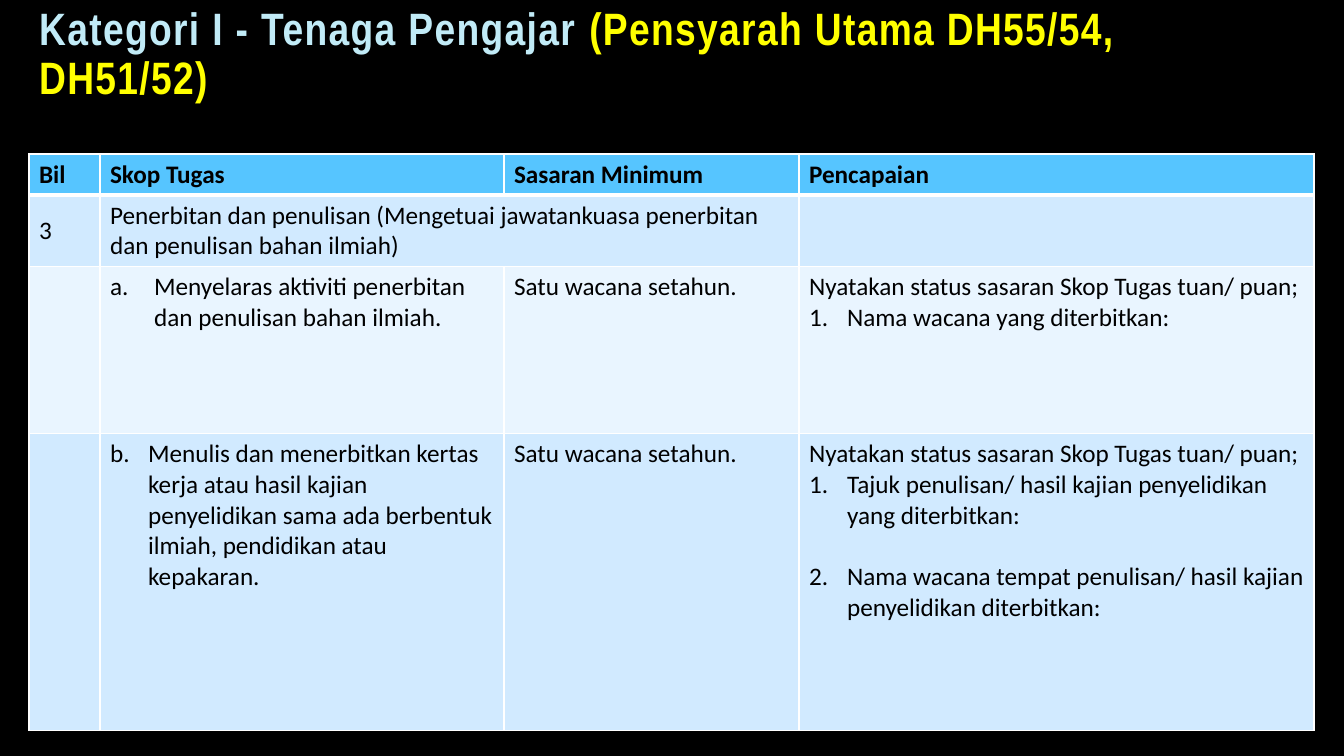
from lxml import etree
from pptx import Presentation
from pptx import util as u
from pptx.dml.color import RGBColor
from pptx.enum import text
from pptx.oxml import ns

PX = 914400 / 100.8  # EMU in one px

BLACK, WHITE = "000000", "FFFFFF"
HEADER_FILL, DARK_BAND, LIGHT_BAND = "56C5FF", "D1EAFF", "E9F5FF"

COLUMN_WIDTHS = [71, 404, 295, 515]
ROW_HEIGHTS = [41, 71, 167, 297]
ROW_FILLS = [HEADER_FILL, DARK_BAND, LIGHT_BAND, DARK_BAND]
STATUS = "Nyatakan status sasaran Skop Tugas tuan/ puan;"
TARGET = "Satu wacana setahun."

# A paragraph is plain text, or (text, numbering, start, indent px, space before pt)
ROWS = [
    [["Bil"], ["Skop Tugas"], ["Sasaran Minimum"], ["Pencapaian"]],
    [["3"],
     ["Penerbitan dan penulisan (Mengetuai jawatankuasa penerbitan dan penulisan bahan ilmiah)"],
     [], []],
    [[],
     [("Menyelaras aktiviti penerbitan dan penulisan bahan ilmiah.", "alphaLcPeriod", 1, 44, 0)],
     [TARGET],
     [STATUS, ("Nama wacana yang diterbitkan:", "arabicPeriod", 1, 38, 0)]],
    [[],
     [("Menulis dan menerbitkan kertas kerja atau hasil kajian penyelidikan sama ada "
       "berbentuk ilmiah, pendidikan atau kepakaran.", "alphaLcPeriod", 2, 38, 0)],
     [TARGET],
     [STATUS,
      ("Tajuk penulisan/ hasil kajian penyelidikan yang diterbitkan:", "arabicPeriod", 1, 38, 0),
      ("Nama wacana tempat penulisan/ hasil kajian penyelidikan diterbitkan:",
       "arabicPeriod", 2, 38, 22)]],
]


def px(length):
    return u.Emu(round(length * PX))


def color(value):
    return RGBColor.from_string(value)


def add_child(parent, tag, **attributes):
    child = etree.SubElement(parent, ns.qn(tag))
    for name, value in attributes.items():
        child.set(name, str(value))
    return child


def format_font(font, name, size, value, bold):
    font.name, font.size, font.bold = name, u.Pt(size), bold
    font.color.rgb = color(value)


def set_numbering(paragraph, numbering, start, indent):
    properties = paragraph._p.get_or_add_pPr()
    properties.set("marL", str(px(indent)))
    properties.set("indent", str(-px(indent)))
    add_child(properties, "a:buFont", typeface="+mj-lt")
    add_child(properties, "a:buAutoNum", type=numbering, startAt=start)


def set_borders(cell, top, bottom):
    properties = cell._tc.get_or_add_tcPr()
    for side, width in (("L", 1), ("R", 1), ("T", top), ("B", bottom)):
        line = add_child(properties, f"a:ln{side}", w=u.Pt(width))
        add_child(add_child(line, "a:solidFill"), "a:srgbClr", val=WHITE)


def fill_cell(cell, paragraphs, bold):
    frame = cell.text_frame
    for index, item in enumerate(paragraphs):
        paragraph = frame.add_paragraph() if index else frame.paragraphs[0]
        if isinstance(item, tuple):
            content, numbering, start, indent, space = item
            if space:
                paragraph.space_before = u.Pt(space)
            set_numbering(paragraph, numbering, start, indent)
        else:
            content = item
        paragraph.text = content
        format_font(paragraph.runs[0].font, "Calibri", 18, BLACK, bold)


def add_title(slide, parts):
    title = slide.shapes.title
    title.left, title.top, title.width, title.height = px(29), px(42), px(1146), px(67)
    frame = title.text_frame
    frame.word_wrap = True
    frame.auto_size = text.MSO_AUTO_SIZE.NONE
    frame.vertical_anchor = text.MSO_ANCHOR.BOTTOM
    paragraph = frame.paragraphs[0]
    paragraph.alignment = text.PP_ALIGN.LEFT
    paragraph.line_spacing = 0.9
    for content, value in parts:
        run = paragraph.add_run()
        run.text = content
        format_font(run.font, "Arial Narrow", 32.4, value, True)
        # Letter spacing and a faint outline
        properties = run._r.get_or_add_rPr()
        properties.set("spc", "100")
        outline = etree.Element(ns.qn("a:ln"), w=str(u.Pt(0.75)))
        tint = add_child(add_child(outline, "a:solidFill"), "a:srgbClr", val="404040")
        add_child(tint, "a:alpha", val=10000)
        properties.insert(0, outline)


def add_task_table(slide):
    table = slide.shapes.add_table(len(ROWS), len(COLUMN_WIDTHS), px(29), px(154),
                                   px(sum(COLUMN_WIDTHS)), px(sum(ROW_HEIGHTS))).table
    for column, width in zip(table.columns, COLUMN_WIDTHS):
        column.width = px(width)
    for row, height in zip(table.rows, ROW_HEIGHTS):
        row.height = px(height)
    for r, row in enumerate(ROWS):
        for c, paragraphs in enumerate(row):
            cell = table.cell(r, c)
            # The line under the header is thicker
            set_borders(cell, 3 if r == 1 else 1, 3 if r == 0 else 1)
            cell.fill.solid()
            cell.fill.fore_color.rgb = color(ROW_FILLS[r])
            cell.vertical_anchor = text.MSO_ANCHOR.MIDDLE if r < 2 else text.MSO_ANCHOR.TOP
            fill_cell(cell, paragraphs, r == 0)
    table.cell(1, 1).merge(table.cell(1, 2))


def main():
    presentation = Presentation()
    presentation.slide_width, presentation.slide_height = px(1344), px(756)
    slide = presentation.slides.add_slide(presentation.slide_layouts[5])
    slide.background.fill.solid()
    slide.background.fill.fore_color.rgb = color(BLACK)
    add_task_table(slide)
    add_title(slide, [("Kategori I - Tenaga Pengajar ", "C1EBF7"),
                      ("(Pensyarah Utama DH55/54, DH51/52)", "FFFF00")])
    presentation.save("out.pptx")


if __name__ == "__main__":
    main()
